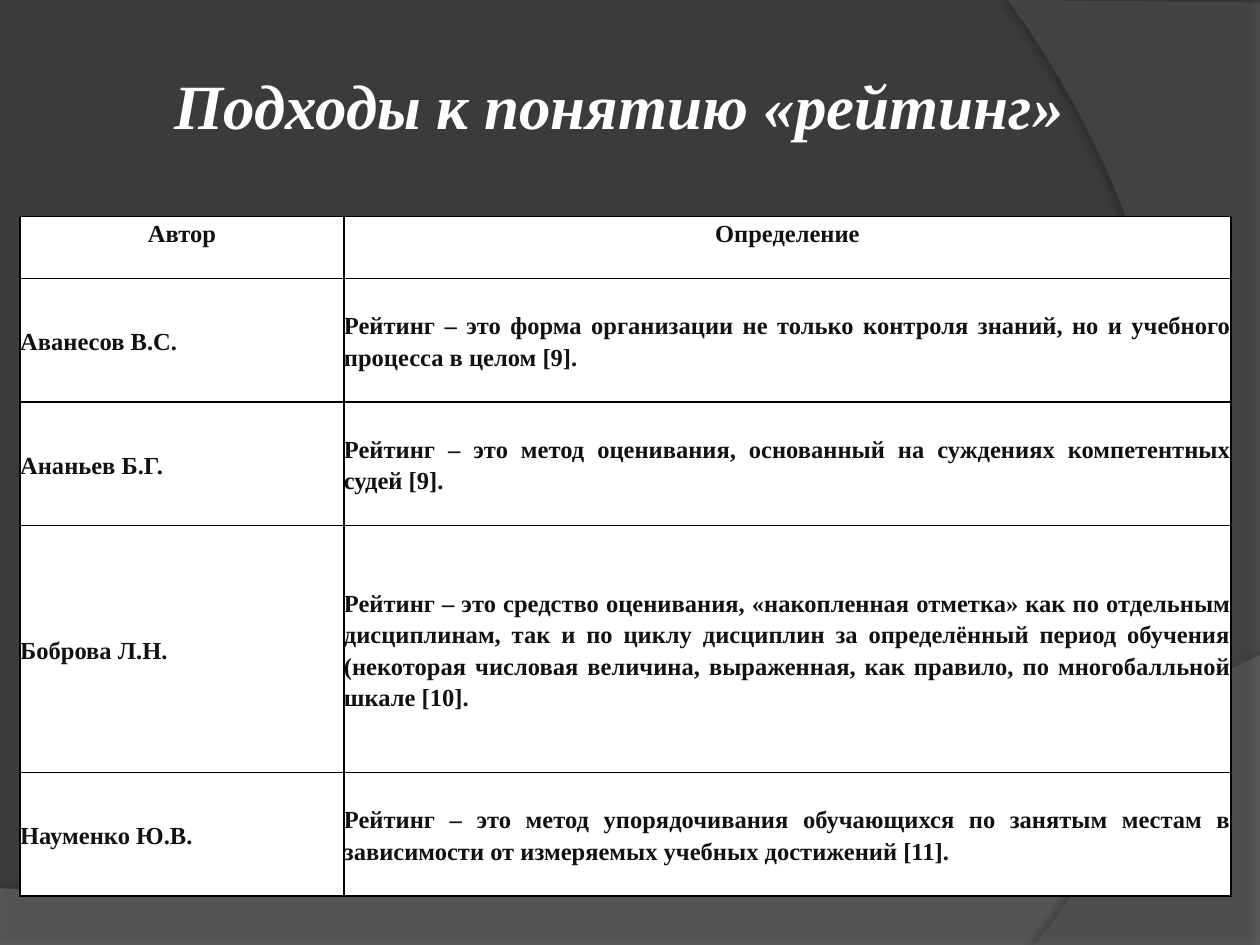
from pptx import Presentation
from pptx.dml.color import RGBColor as Rgb
from pptx.enum.text import MSO_ANCHOR as Anchor, PP_ALIGN as Align
from pptx.oxml import parse_xml
from pptx.oxml.ns import nsdecls, qn
from pptx.util import Inches, Pt
from lxml.etree import SubElement as Sub

HUES = {"back": "3B3B3B", "wave": "7F7F7F", "arc": "5E5E5E", "ink": "111111",
        "white": "FFFFFF", "black": "000000"}
ROWS = [
    ("Автор", "Определение", 1),
    ("Аванесов В.С.", "Рейтинг – это форма организации не только контроля знаний, "
     "но и учебного процесса в целом [9].", 2),
    ("Ананьев Б.Г.", "Рейтинг – это метод оценивания, основанный на суждениях "
     "компетентных судей [9].", 2),
    ("Боброва Л.Н.", "Рейтинг – это средство оценивания, «накопленная отметка» как по "
     "отдельным дисциплинам, так и по циклу дисциплин за определённый период обучения "
     "(некоторая числовая величина, выраженная, как правило, по многобалльной шкале [10].", 4),
    ("Науменко Ю.В.", "Рейтинг – это метод упорядочивания обучающихся по занятым местам в "
     "зависимости от измеряемых учебных достижений [11].", 2),
]
UNIT = 0.49
COLS = (2.57, 7.04)


def curve(a, b, c, d, steps=40):
    """Return points along a cubic curve after its start."""
    ts = [i / steps for i in range(1, steps + 1)]
    return [tuple((1 - t) ** 3 * p + 3 * (1 - t) ** 2 * t * q + 3 * (1 - t) * t * t * r
                  + t ** 3 * s for p, q, r, s in zip(a, b, c, d)) for t in ts]


class Deck:
    """Hold the style and the current slide."""

    def __init__(self, face="Times New Roman"):
        """Open a blank slide with a plain backdrop."""
        self.face = face
        self.prs = Presentation()
        self.prs.slide_width, self.prs.slide_height = Inches(10), Inches(7.5)
        self.slide = self.prs.slides.add_slide(self.prs.slide_layouts[6])
        self.paint(self.slide.background.fill, "back")

    def paint(self, fill, hue):
        """Make a fill solid."""
        fill.solid()
        fill.fore_color.rgb = Rgb.from_string(HUES[hue])

    def label(self, frame, text, hue, form, para):
        """Put one styled paragraph in a text frame."""
        line = frame.paragraphs[0]
        run = line.add_run()
        run.text = text
        run.font.color.rgb = Rgb.from_string(HUES[hue])
        for part, vals in ((run.font, {"name": self.face, **form}), (line, para)):
            for key, val in vals.items():
                setattr(part, key, val)

    def sweep(self, dots, hue, clear, shade, dist, turn):
        """Draw a translucent outline with a soft shadow."""
        pen = self.slide.shapes.build_freeform(*map(Inches, dots[0]))
        pen.add_line_segments([tuple(map(Inches, d)) for d in dots[1:]], close=True)
        shape = pen.convert_to_shape()
        self.paint(shape.fill, hue)
        shape.line.fill.background()
        shape.shadow.inherit = False
        props = shape.element.spPr
        tint = props.find(qn("a:solidFill"))[0]
        Sub(tint, qn("a:alpha"), val=str(clear * 1000))
        glow = Sub(props.find(qn("a:effectLst")), qn("a:outerShdw"), blurRad=str(Pt(4)),
                   dist=str(Pt(dist)), dir=str(turn * 60000), algn="ctr", rotWithShape="0")
        dark = Sub(glow, qn("a:srgbClr"), val=HUES["black"])
        Sub(dark, qn("a:alpha"), val=str(shade * 1000))

    def title(self, text, *box):
        """Add the heading."""
        frame = self.slide.shapes.add_textbox(*map(Inches, box)).text_frame
        frame.word_wrap = False
        frame.vertical_anchor = Anchor.MIDDLE
        self.label(frame, text, "white", {"size": Pt(36), "bold": True, "italic": True},
                   {"alignment": Align.CENTER})

    def edge(self, cell):
        """Rule all four sides of a cell."""
        props = cell._tc.get_or_add_tcPr()
        for side in "LRTB":
            props.append(parse_xml(
                f'<a:ln{side} {nsdecls("a")} w="{Pt(1)}"><a:solidFill>'
                f'<a:srgbClr val="{HUES["black"]}"/></a:solidFill></a:ln{side}>'))

    def table(self, rows, left, top):
        """Add the ruled table with a centred head row."""
        high = UNIT * sum(row[-1] for row in rows)
        grid = self.slide.shapes.add_table(
            len(rows), len(COLS), *map(Inches, (left, top, sum(COLS), high))).table
        for col, wide in zip(grid.columns, COLS):
            col.width = Inches(wide)
        for i, (*texts, units) in enumerate(rows):
            grid.rows[i].height = Inches(UNIT * units)
            para = {"alignment": Align.JUSTIFY if i else Align.CENTER,
                    "line_spacing": Pt(18), "space_after": Pt(0 if i else 10)}
            for j, text in enumerate(texts):
                cell = grid.cell(i, j)
                self.edge(cell)
                self.paint(cell.fill, "white")
                for side in ("left", "right", "top", "bottom"):
                    setattr(cell, f"margin_{side}", 0)
                cell.vertical_anchor = Anchor.MIDDLE if i else Anchor.TOP
                self.label(cell.text_frame, text, "ink", {"size": Pt(14), "bold": True}, para)


def main():
    """Build and save the slide."""
    deck = Deck()
    wave = curve((10, 5.2), (5.59, 7.29), (3.91, 7.19), (0, 7.05))
    arc = curve((8.21, 7.5), (9.35, 6.19), (10.18, 3), (8, 0))
    deck.sweep([(0, 7.05), (0, 7.51), (10, 7.51), (10, 5.2), *wave[:-1]],
               "wave", 45, 35, 3.5, 270)
    deck.sweep([(10, 0.02), (10, 7.5), (8.21, 7.5), *arc], "arc", 40, 45, 4, 180)
    deck.table(ROWS, 0.16, 1.72)
    deck.title("Подходы к понятию «рейтинг»", 1.28, 0.47, 7.27, 0.71)
    deck.prs.save("out.pptx")


if __name__ == "__main__":
    main()
